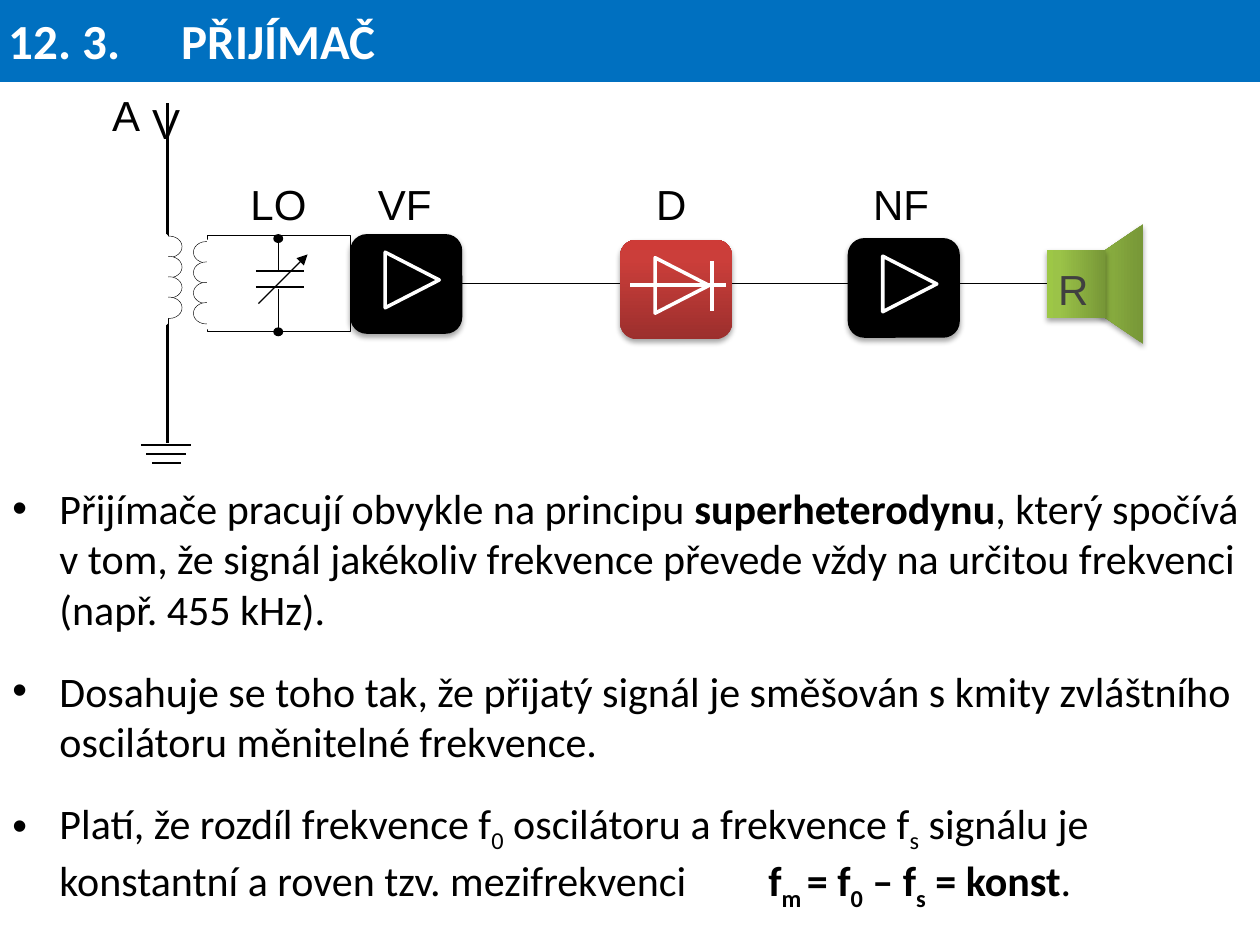
import pptx
import pptx.util
import pptx.dml.color
import pptx.enum.shapes
import pptx.enum.text
import pptx.oxml
import pptx.oxml.ns
import lxml.etree

Cm = pptx.util.Cm
Pt = pptx.util.Pt
SHAPES = pptx.enum.shapes.MSO_SHAPE
ALIGN = pptx.enum.text.PP_ALIGN
ANCHOR = pptx.enum.text.MSO_ANCHOR
qn = pptx.oxml.ns.qn

COLORS = {"black": "000000", "white": "FFFFFF", "blue": "0070C0", "gray": "404040"}
GRADIENTS = {
    "green": [(0, "779737"), (80, "9BC348"), (100, "9DC746")],
    "red": [(0, "9C2F2D"), (80, "CB3E3A"), (100, "CE3B37")],
}


def add_element(parent, tag, **attributes):
    """Append a DrawingML element to parent."""
    return lxml.etree.SubElement(parent, qn(tag), attributes)


class Diagram:
    """Style and current slide; every length is in centimetres."""

    def __init__(self, slide):
        self.slide = slide
        self.label_format = {"name": "Arial", "size": Pt(24), "bold": False}
        self.body_format = {"name": "Calibri", "size": Pt(24), "bold": False}
        self.title_format = {"name": "Calibri", "size": Pt(28), "bold": True}

    def color(self, name):
        return pptx.dml.color.RGBColor.from_string(COLORS[name])

    def run(self, paragraph, text, formats, color="black", **changes):
        run = paragraph.add_run()
        run.text = text
        for name, value in {**formats, **changes}.items():
            setattr(run.font, name, value)
        run.font.color.rgb = self.color(color)
        return run

    def tab_stop(self, paragraph, position):
        tabs = add_element(paragraph._p.get_or_add_pPr(), "a:tabLst")
        add_element(tabs, "a:tab", pos=str(Cm(position)), algn="l")

    def shape(self, kind, left, top, width, height, fill=None, line=None,
              line_width=1, rotation=0, shadow=False):
        shape = self.slide.shapes.add_shape(
            kind, Cm(left), Cm(top), Cm(width), Cm(height))
        shape.rotation = rotation
        shape.shadow.inherit = False
        if fill in GRADIENTS:
            self.gradient(shape, GRADIENTS[fill])
        elif fill:
            shape.fill.solid()
            shape.fill.fore_color.rgb = self.color(fill)
        else:
            shape.fill.background()
        if line:
            shape.line.color.rgb = self.color(line)
            shape.line.width = Pt(line_width)
        else:
            shape.line.fill.background()
        if shadow:
            effects = shape._element.spPr.find(qn("a:effectLst"))
            outer = add_element(effects, "a:outerShdw", blurRad=str(Pt(3.1)),
                                dist=str(Pt(1.8)), dir="5400000", rotWithShape="0")
            shade = add_element(outer, "a:srgbClr", val=COLORS["black"])
            add_element(shade, "a:alpha", val="35000")
        return shape

    def gradient(self, shape, stops):
        shape.fill.gradient()
        shape.fill.gradient_angle = 90
        stop_list = shape._element.spPr.find(qn("a:gradFill")).find(qn("a:gsLst"))
        for old_stop in list(stop_list):
            stop_list.remove(old_stop)
        for position, color in stops:
            stop = add_element(stop_list, "a:gs", pos=str(position * 1000))
            add_element(stop, "a:srgbClr", val=color)

    def line(self, x1, y1, x2, y2, width=0.75, color="black", arrow=False):
        connector = self.slide.shapes.add_connector(
            pptx.enum.shapes.MSO_CONNECTOR.STRAIGHT, Cm(x1), Cm(y1), Cm(x2), Cm(y2))
        connector.line.color.rgb = self.color(color)
        connector.line.width = Pt(width)
        properties = connector._element.spPr
        if arrow:
            add_element(properties.find(qn("a:ln")), "a:tailEnd", type="triangle")
        add_element(properties, "a:effectLst")

    def label(self, text, left, top, width, wrap=False, color="black", align=ALIGN.LEFT):
        box = self.slide.shapes.add_textbox(Cm(left), Cm(top), Cm(width), Cm(1.09))
        box.text_frame.word_wrap = wrap
        box.text_frame.auto_size = pptx.enum.text.MSO_AUTO_SIZE.SHAPE_TO_FIT_TEXT
        paragraph = box.text_frame.paragraphs[0]
        paragraph.alignment = align
        self.run(paragraph, text, self.label_format, color)

    def coil(self, left, top, rotation, mask_left, mask_top):
        for turn in range(4):
            self.shape(SHAPES.OVAL, left, top + turn * 0.41, 0.43, 0.51,
                       "white", "black", 0.25, rotation)
        self.shape(SHAPES.RECTANGLE, mask_left, mask_top, 1.78, 0.25,
                   "white", "white", 2, rotation)

    def block(self, left, top, fill):
        """Rounded stage with a white triangle pointing right."""
        self.shape(SHAPES.ROUNDED_RECTANGLE, left, top, 2.26, 2.01, fill, shadow=True)
        self.shape(SHAPES.ISOSCELES_TRIANGLE, left + 0.69, top + 0.38, 1.12, 1.09,
                   line="white", line_width=2, rotation=90)

    def title(self, text):
        bar = self.shape(SHAPES.RECTANGLE, 0, 0, 25.4, 1.6, "blue", "blue", 3)
        frame = bar.text_frame
        frame.margin_left = Cm(0.18)
        frame.vertical_anchor = ANCHOR.MIDDLE
        paragraph = frame.paragraphs[0]
        paragraph.alignment = ALIGN.LEFT
        self.tab_stop(paragraph, 3.48)
        self.run(paragraph, text, self.title_format, "white")

    def bullets(self, items, left, top, width, height, tab):
        box = self.slide.shapes.add_textbox(Cm(left), Cm(top), Cm(width), Cm(height))
        frame = box.text_frame
        frame.word_wrap = True
        for index, parts in enumerate(items):
            paragraph = frame.add_paragraph() if index else frame.paragraphs[0]
            paragraph.space_before = Pt(18)
            properties = paragraph._p.get_or_add_pPr()
            properties.set("marL", str(Cm(0.95)))
            properties.set("indent", str(Cm(-0.95)))
            add_element(properties, "a:buFont", typeface="Arial")
            add_element(properties, "a:buChar", char="•")
            self.tab_stop(paragraph, tab)
            for text, style in parts:
                run = self.run(paragraph, text, self.body_format, bold="b" in style)
                if "s" in style:
                    run.font._element.set("baseline", "-25000")


# Body text: "b" is bold, "s" is subscript
BODY = [
    [("Přijímače pracují obvykle na principu ", ""), ("superheterodynu", "b"),
     (", který spočívá v tom, že signál jakékoliv frekvence převede vždy "
      "na určitou frekvenci (např. 455 kHz).", "")],
    [("Dosahuje se toho tak, že přijatý signál je směšován s kmity zvláštního "
      "oscilátoru měnitelné frekvence.", "")],
    [("Platí, že rozdíl frekvence f", ""), ("0", "s"), (" oscilátoru a frekvence f", ""),
     ("s", "s"), (" signálu je konstantní a roven tzv. mezifrekvenci \t", ""),
     ("f", "b"), ("m ", "bs"), ("= f", "b"), ("0", "bs"), (" – f", "b"),
     ("s", "bs"), (" = konst", "b"), (".", "")],
]


def main():
    presentation = pptx.Presentation()
    presentation.slide_width, presentation.slide_height = Cm(25.4), Cm(19.05)
    diagram = Diagram(presentation.slides.add_slide(presentation.slide_layouts[6]))
    diagram.bullets(BODY, 0, 9.6, 25.4, 9.12, tab=15.24)
    diagram.title("12. 3.\tPŘIJÍMAČ")

    # Signal path, antenna and ground
    diagram.line(9.25, 5.72, 21.29, 5.72)
    diagram.line(3.38, 2.08, 3.38, 8.94, 1.5)
    for step, half_width in enumerate([0.51, 0.4, 0.29]):
        y = 8.97 + step * 0.18
        diagram.line(3.35 - half_width, y, 3.35 + half_width, y, 1.5)
    diagram.label("V", 2.82, 1.85, 1.04)
    diagram.label("A", 2.01, 1.68, 1.04)

    # Coupled coils and tuned circuit
    diagram.coil(3.2, 4.72, 90, 2.34, 5.51)
    diagram.shape(SHAPES.RECTANGLE, 4.17, 4.75, 2.9, 1.93, line="black", line_width=0.25)
    diagram.coil(3.94, 4.83, 270, 3.45, 5.61)

    # Variable capacitor
    diagram.line(5.61, 4.78, 5.61, 6.71)
    for top in (4.72, 6.6):
        diagram.shape(SHAPES.OVAL, 5.51, top, 0.2, 0.18, "black")
    diagram.shape(SHAPES.RECTANGLE, 5.44, 5.49, 0.48, 0.3, "white", "white", 2)
    for y in (5.46, 5.79):
        diagram.line(5.16, y, 6.12, y, 1)
    diagram.line(5.21, 6.12, 6.2, 5.13, arrow=True)

    # Amplifiers and loudspeaker
    diagram.block(7.06, 4.72, "black")
    diagram.shape(SHAPES.ISOSCELES_TRIANGLE, 20.96, 4.85, 2.41, 1.75, "green",
                  rotation=270, shadow=True)
    diagram.shape(SHAPES.RECTANGLE, 21.01, 5.13, 1.37, 1.19, "green",
                  rotation=270, shadow=True)
    diagram.label("R", 21.08, 5.18, 1.09, color="gray", align=ALIGN.CENTER)
    diagram.block(17.09, 4.8, "black")

    # Detector
    diagram.block(12.5, 4.83, "red")
    diagram.line(12.7, 5.74, 14.63, 5.74, 2.25, "white")
    diagram.line(14.35, 5.26, 14.35, 6.27, 2.25, "white")

    # Stage labels
    for text, left in (("LO", 4.8), ("VF", 7.37), ("NF", 17.35), ("D", 12.98)):
        diagram.label(text, left, 3.48, 2.03, wrap=True)

    presentation.save("out.pptx")


if __name__ == "__main__":
    main()
